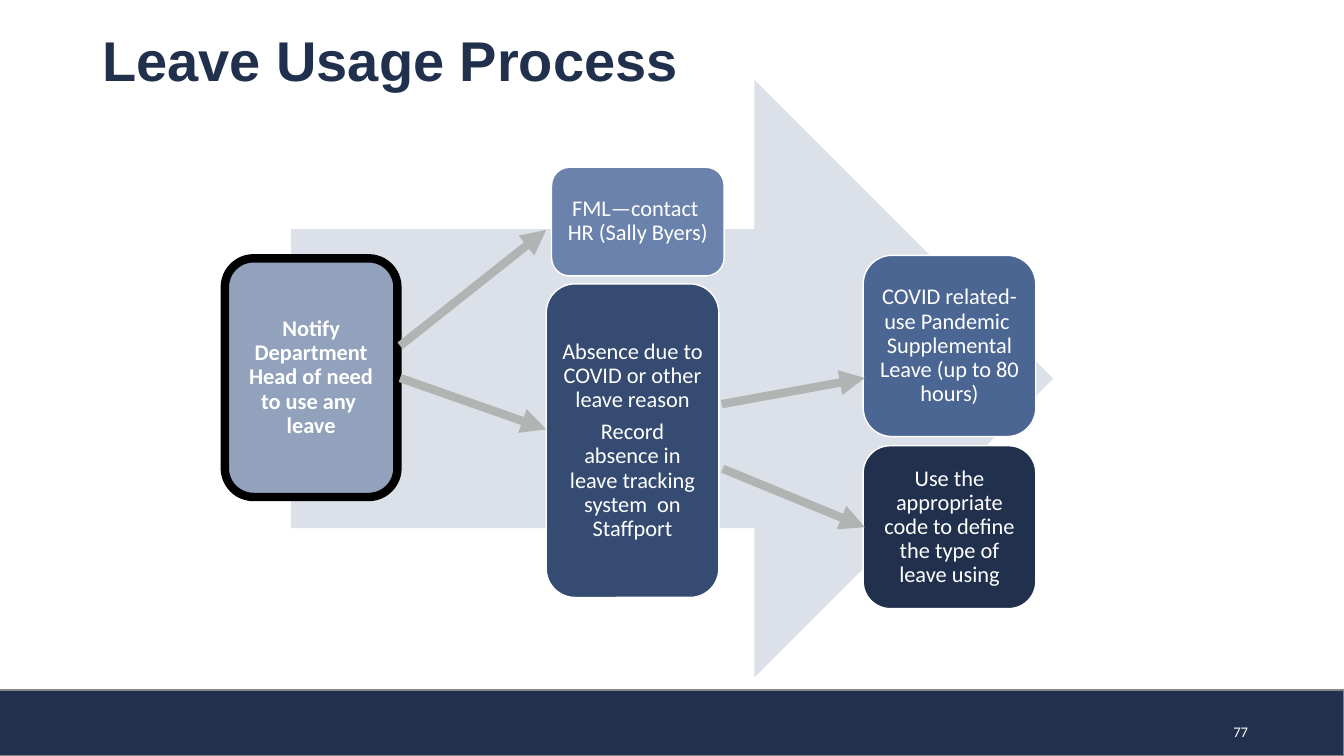
import pptx
import pptx.util
import pptx.dml.color
import pptx.enum.shapes
import pptx.enum.text
import pptx.oxml.ns
import lxml.etree

Pt = pptx.util.Pt
SHAPE = pptx.enum.shapes.MSO_SHAPE
ALIGN = pptx.enum.text.PP_ALIGN
ANCHOR = pptx.enum.text.MSO_ANCHOR

COLORS = {
    "navy": "21314D", "footer line": "848584", "backdrop": "DCE0E8",
    "notify": "92A2BD", "fml": "6B83AC", "covid": "4B6693",
    "absence": "354B71", "connector": "B2B4B3",
    "white": "FFFFFF", "black": "000000",
}

TITLE = "Leave Usage Process"
PAGE_NUMBER = "77"
STEP_W = 123.3

# left, top, height, fill, outline, outline width, bold, paragraphs
STEPS = [
    (160.6, 184.5, 170.5, "notify", "black", 6, True,
     ["Notify Department Head of need to use any  leave"]),
    (394, 119.5, 77.6, "fml", "white", 1, False,
     ["FML—contact  HR (Sally Byers)"]),
    (616.6, 182.4, 129.5, "covid", "white", 1, False,
     ["COVID related- use Pandemic  Supplemental Leave (up to 80 hours)"]),
    (390.2, 202.8, 224, "absence", "white", 1, False,
     ["Absence due to COVID or other leave reason",
      "Record absence in leave tracking system  on Staffport"]),
    (616.6, 318.4, 116.4, "navy", "white", 1, False,
     ["Use the appropriate code to define the type of leave using"]),
]

# from x, from y, to x, to y
ARROWS = [
    (285.8, 270, 390.2, 306.7),
    (285.8, 247, 390.2, 164.2),
    (515.5, 288.7, 617.8, 270),
    (516.2, 334.8, 617.8, 376.6),
]


def rgb(name):
    return pptx.dml.color.RGBColor.from_string(COLORS[name])


def add_block(kind, box, fill, outline=None, width=1):
    sp = s.shapes.add_shape(kind, *map(Pt, box))
    sp.shadow.inherit = False
    sp.fill.solid()
    sp.fill.fore_color.rgb = rgb(fill)
    if outline:
        sp.line.color.rgb = rgb(outline)
        sp.line.width = Pt(width)
    else:
        sp.line.fill.background()
    return sp


def set_font(p, name, size, color, bold=False):
    p.font.name = name
    p.font.size = Pt(size)
    p.font.color.rgb = rgb(color)
    p.font.bold = bold


def add_label(box, text, align, anchor):
    tf = s.shapes.add_textbox(*map(Pt, box)).text_frame
    tf.word_wrap = True
    tf.vertical_anchor = anchor
    p = tf.paragraphs[0]
    p.text = text
    p.alignment = align
    return p


def add_step(left, top, height, fill, outline, width, bold, paragraphs):
    sp = add_block(SHAPE.ROUNDED_RECTANGLE, (left, top, STEP_W, height),
                   fill, outline, width)
    tf = sp.text_frame
    tf.word_wrap = True
    tf.vertical_anchor = ANCHOR.MIDDLE
    tf.margin_left = tf.margin_right = tf.margin_top = tf.margin_bottom = Pt(5)
    for i, text in enumerate(paragraphs):
        p = tf.add_paragraph() if i else tf.paragraphs[0]
        p.text = text
        p.alignment = ALIGN.CENTER
        p.line_spacing = 0.9
        p.space_after = Pt(5.6)
        set_font(p, "Calibri", 16, "white", bold)


def add_arrow(*ends):
    c = s.shapes.add_connector(pptx.enum.shapes.MSO_CONNECTOR.STRAIGHT,
                               *map(Pt, ends))
    c.line.color.rgb = rgb("connector")
    c.line.width = Pt(6)
    qn = pptx.oxml.ns.qn
    ln = c.line._get_or_add_ln()
    lxml.etree.SubElement(ln, qn("a:tailEnd")).set("type", "triangle")
    lxml.etree.SubElement(c._element.spPr, qn("a:effectLst"))


prs = pptx.Presentation()
prs.slide_width, prs.slide_height = Pt(960), Pt(540)
s = prs.slides.add_slide(prs.slide_layouts[6])

# Footer band and page number
add_block(SHAPE.RECTANGLE, (-0.5, 493, 960.5, 47), "navy", "footer line")
p = add_label((682.6, 513, 216, 20), PAGE_NUMBER, ALIGN.RIGHT, ANCHOR.TOP)
set_font(p, "Calibri", 10.5, "white")

# Title
p = add_label((66, 16.5, 828, 57.6), TITLE, ALIGN.LEFT, ANCHOR.MIDDLE)
p.line_spacing = 0.9
set_font(p, "Arial", 40, "navy", True)

# Process steps on the large backdrop arrow
add_block(SHAPE.RIGHT_ARROW, (208, 57, 544.3, 427), "backdrop")
for step in STEPS:
    add_step(*step)

# Arrows between steps
for arrow in ARROWS:
    add_arrow(*arrow)

prs.save("out.pptx")
